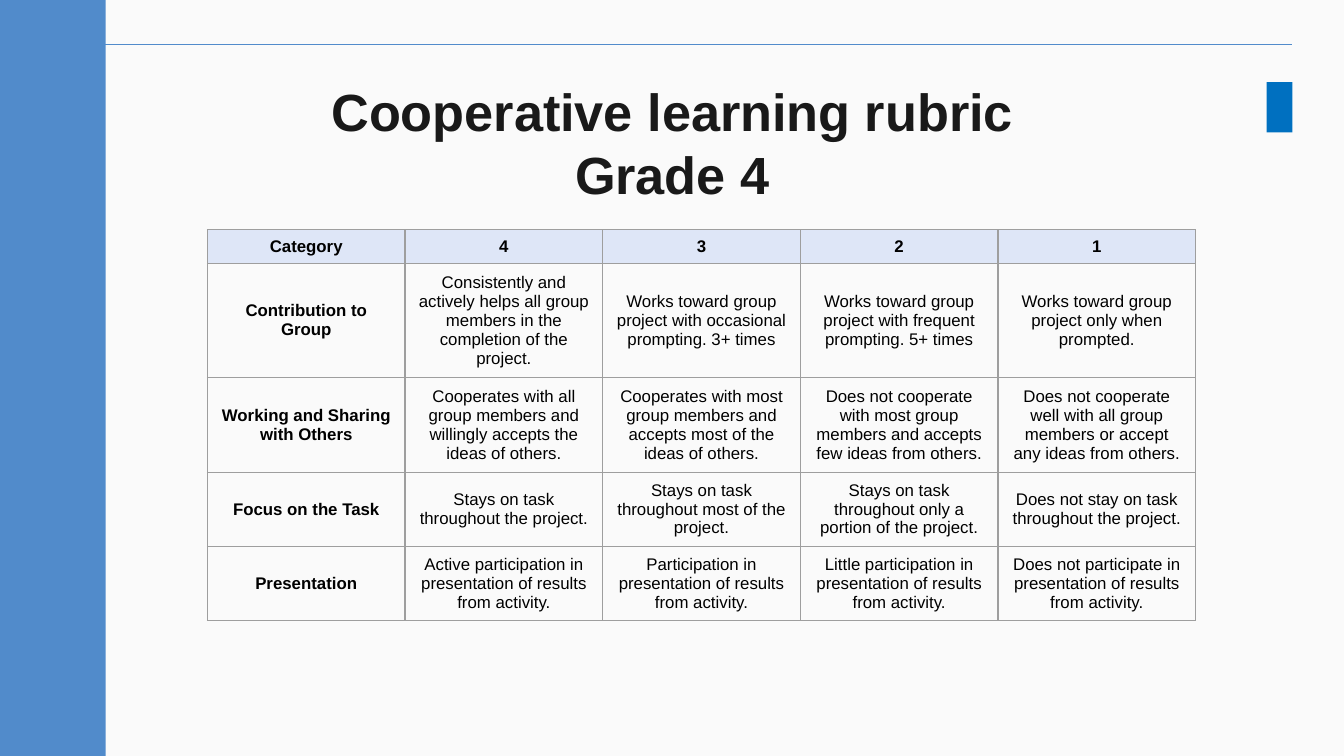
from lxml import etree
from pptx import Presentation
from pptx.dml.color import RGBColor
from pptx.enum.shapes import MSO_CONNECTOR, MSO_SHAPE
from pptx.enum.text import MSO_ANCHOR, PP_ALIGN
from pptx.oxml import parse_xml
from pptx.oxml.ns import nsdecls, qn
from pptx.util import Pt

STRAIGHT = MSO_CONNECTOR.STRAIGHT
RECTANGLE = MSO_SHAPE.RECTANGLE
CENTER = PP_ALIGN.CENTER
TOP, MIDDLE = MSO_ANCHOR.TOP, MSO_ANCHOR.MIDDLE

BLUE = "518BCB"
HEADER_FILL = "DEE6F7"
GRID = "9E9E9E"


def color(hex_text):
    return RGBColor.from_string(hex_text)


def style(para, size, hex_text, bold):
    para.alignment = CENTER
    para.font.name = "Arial"
    para.font.size = Pt(size)
    para.font.bold = bold
    para.font.color.rgb = color(hex_text)


deck = Presentation()
deck.slide_width, deck.slide_height = Pt(720), Pt(405)
page = deck.slides.add_slide(deck.slide_layouts[6])
page.background.fill.solid()
page.background.fill.fore_color.rgb = color("FAFAFA")

# Rule across the top
rule = page.shapes.add_connector(STRAIGHT, Pt(3.6), Pt(23.8), Pt(692.3), Pt(23.8))
rule.line.color.rgb = color(BLUE)
rule.line.width = Pt(0.75)
etree.SubElement(rule._element.spPr, qn("a:effectLst"))

# Side bar and small accent block
for left, top, width, height, fill in (
    (0, 0, 56.6, 405, BLUE),
    (678.6, 44, 13.7, 27, "0070C0"),
):
    block = page.shapes.add_shape(RECTANGLE, Pt(left), Pt(top), Pt(width), Pt(height))
    block.shadow.inherit = False
    block.fill.solid()
    block.fill.fore_color.rgb = color(fill)
    block.line.fill.background()

# Title
title = page.shapes.add_textbox(Pt(56.6), Pt(35.5), Pt(607), Pt(45.4))
frame = title.text_frame
frame.word_wrap = True
frame.vertical_anchor = TOP
frame.margin_left = frame.margin_right = Pt(7.2)
frame.margin_top = frame.margin_bottom = Pt(7.2)
frame.text = "Cooperative learning rubric\nGrade 4"
for para in frame.paragraphs:
    style(para, 28, "191919", True)

# Rubric table
rubric = [
    ["Category", "4", "3", "2", "1"],
    [
        "Contribution to Group",
        "Consistently and actively helps all group members in the completion of the project.",
        "Works toward group project with occasional prompting. 3+ times",
        "Works toward group project with frequent prompting. 5+ times",
        "Works toward group project only when prompted.",
    ],
    [
        "Working and Sharing with Others",
        "Cooperates with all group members and willingly accepts the ideas of others.",
        "Cooperates with most group members and accepts most of the ideas of others.",
        "Does not cooperate with most group members and accepts few ideas from others.",
        "Does not cooperate well with all group members or accept any ideas from others.",
    ],
    [
        "Focus on the Task",
        "Stays on task throughout the project.",
        "Stays on task throughout most of the project.",
        "Stays on task throughout only a portion of the project.",
        "Does not stay on task throughout the project.",
    ],
    [
        "Presentation",
        "Active participation in presentation of results from activity.",
        "Participation in presentation of results from activity.",
        "Little participation in presentation of results from activity.",
        "Does not participate in presentation of results from activity.",
    ],
]
row_heights = [17.5, 57.5, 47.5, 37.5, 37.5]
column_width = 105.9
table = page.shapes.add_table(
    len(rubric), len(rubric[0]), Pt(111.1), Pt(123),
    Pt(column_width * len(rubric[0])), Pt(sum(row_heights)),
).table
for column in table.columns:
    column.width = Pt(column_width)

for row, (texts, height) in enumerate(zip(rubric, row_heights)):
    table.rows[row].height = Pt(height)
    for col, text in enumerate(texts):
        cell = table.cell(row, col)
        cell.text = text
        cell.vertical_anchor = MIDDLE
        style(cell.text_frame.paragraphs[0], 9, "000000", row == 0 or col == 0)
        # Borders come before the fill in the cell properties
        properties = cell._tc.get_or_add_tcPr()
        for side in ("lnL", "lnR", "lnT", "lnB"):
            properties.append(parse_xml(
                f'<a:{side} {nsdecls("a")} w="{Pt(0.75)}"><a:solidFill>'
                f'<a:srgbClr val="{GRID}"/></a:solidFill></a:{side}>'
            ))
        if row == 0:
            cell.fill.solid()
            cell.fill.fore_color.rgb = color(HEADER_FILL)
        else:
            cell.fill.background()

deck.save("out.pptx")
